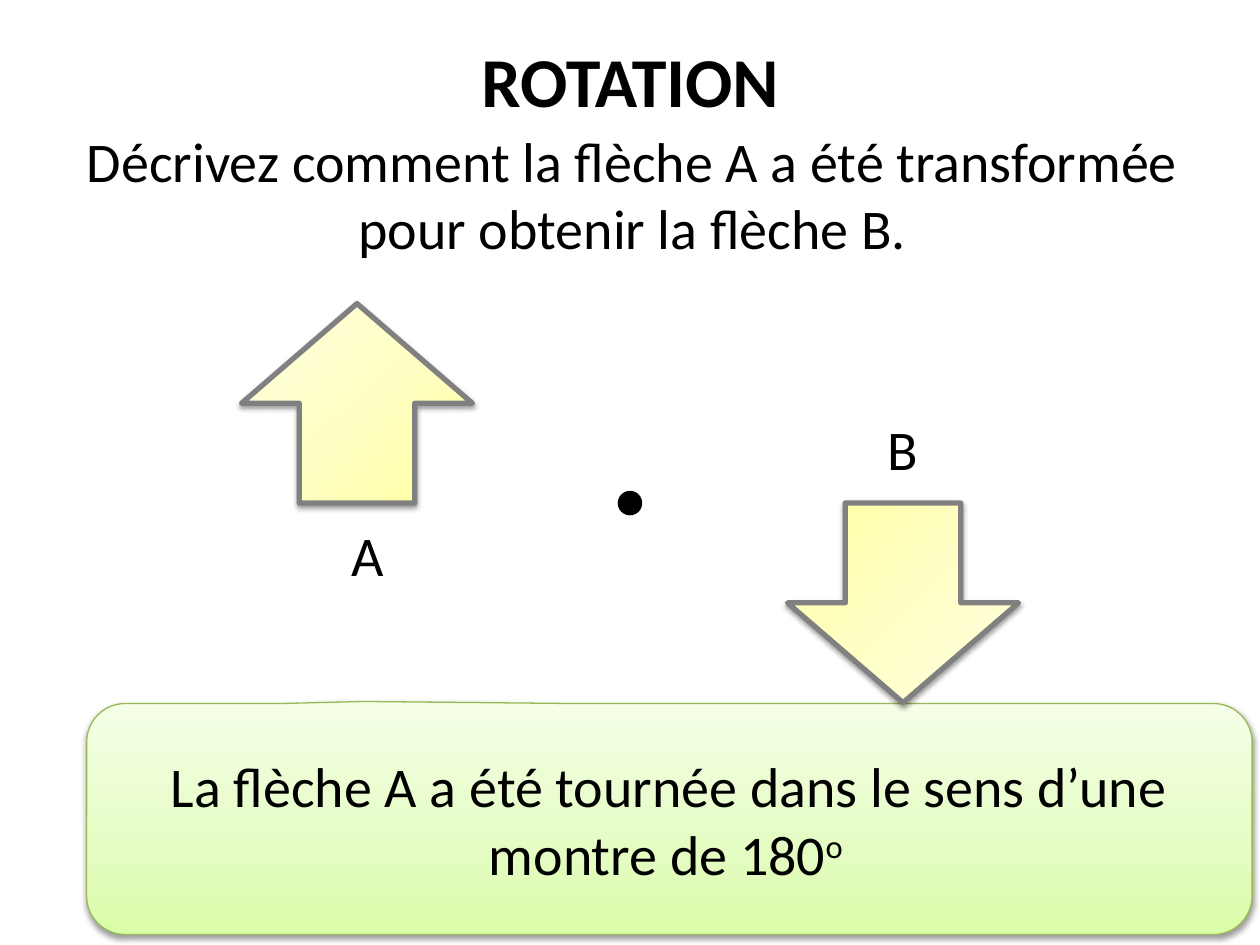
from lxml.etree import SubElement
from pptx import Presentation
from pptx.dml.color import RGBColor
from pptx.enum.shapes import MSO_SHAPE
from pptx.enum.text import MSO_ANCHOR, PP_ALIGN
from pptx.oxml.ns import qn
from pptx.util import Pt

BLACK = "000000"
YELLOWS = [(0, "FFFFA0"), (50, "FFFFC5"), (100, "FFFFE3")]
GREENS = [(0, "DAFDA7"), (35, "E4FCC2"), (100, "F5FFE7")]


def color(value):
    """Turn a hex string into a colour."""
    return RGBColor.from_string(value)


def add_span(para, text, size=32, bold=False, baseline=0):
    """Add a formatted run, raised by baseline percent."""
    span = para.add_run()
    span.text = text
    span.font.name = "Calibri"
    span.font.size = Pt(size)
    span.font.bold = bold
    span.font.color.rgb = color(BLACK)
    if baseline:
        span.font._element.set("baseline", str(baseline * 1000))


def add_text(page, text, left, top, width, height, **style):
    """Add a centred text box."""
    box = page.shapes.add_textbox(Pt(left), Pt(top), Pt(width), Pt(height))
    box.text_frame.word_wrap = True
    para = box.text_frame.paragraphs[0]
    para.alignment = PP_ALIGN.CENTER
    add_span(para, text, **style)


def add_outlined(page, kind, left, top, width, height, line, weight):
    """Add a preset shape with an outline and no shadow."""
    shape = page.shapes.add_shape(kind, Pt(left), Pt(top), Pt(width), Pt(height))
    shape.shadow.inherit = False
    shape.line.color.rgb = color(line)
    shape.line.width = Pt(weight)
    return shape


def set_gradient(shape, stops, angle):
    """Fill a shape with colour stops along a clockwise angle."""
    shape.fill.gradient()
    shape.fill.gradient_angle = 360 - angle
    stop_list = shape._element.spPr.find(qn("a:gradFill")).find(qn("a:gsLst"))
    for old in list(stop_list):
        stop_list.remove(old)
    for position, value in stops:
        stop = SubElement(stop_list, qn("a:gs"), pos=str(position * 1000))
        SubElement(stop, qn("a:srgbClr"), val=value)


def set_shadow(shape):
    """Give a shape a soft shadow below it."""
    effects = shape._element.spPr.find(qn("a:effectLst"))
    shadow = SubElement(effects, qn("a:outerShdw"), blurRad=str(Pt(3.1)),
                        dist=str(Pt(1.6)), dir="5400000", rotWithShape="0")
    tint = SubElement(shadow, qn("a:srgbClr"), val=BLACK)
    SubElement(tint, qn("a:alpha"), val="38000")


def add_arrow(page, left, top, rotation=0):
    """Add a yellow block arrow."""
    arrow = add_outlined(page, MSO_SHAPE.UP_ARROW, left, top, 132, 114, "808080", 3)
    arrow.rotation = rotation
    set_gradient(arrow, YELLOWS, 225)
    set_shadow(arrow)


def add_center(page):
    """Add the dot that marks the centre of rotation."""
    dot = add_outlined(page, MSO_SHAPE.OVAL, 354, 281.5, 12, 12, BLACK, 2)
    dot.fill.solid()
    dot.fill.fore_color.rgb = color(BLACK)


def add_answer(page):
    """Add the green callout with the answer."""
    callout = add_outlined(page, MSO_SHAPE.ROUNDED_RECTANGULAR_CALLOUT,
                           49.5, 402, 666, 132, "98B955", 0.75)
    for index, value in enumerate((-0.262, -0.509, 0.167)):
        callout.adjustments[index] = value
    set_gradient(callout, GREENS, 270)
    set_shadow(callout)
    frame = callout.text_frame
    frame.word_wrap = True
    frame.vertical_anchor = MSO_ANCHOR.MIDDLE
    para = frame.paragraphs[0]
    para.alignment = PP_ALIGN.CENTER
    add_span(para, "La flèche A a été tournée dans le sens d’une montre de 180")
    add_span(para, "o ", baseline=30)


def main():
    """Build the rotation slide."""
    deck = Presentation()
    deck.slide_width, deck.slide_height = Pt(720), Pt(540)
    page = deck.slides.add_slide(deck.slide_layouts[6])
    add_text(page, "ROTATION", 12, 18, 696, 55.5, size=40, bold=True)
    add_arrow(page, 138, 173.5)
    add_center(page)
    add_text(page, "Décrivez comment la flèche A a été transformée pour obtenir la flèche B.",
             13.5, 68.5, 696, 85)
    add_answer(page)
    add_arrow(page, 450, 287.5, rotation=180)
    add_text(page, "A", 192, 294, 36, 46)
    add_text(page, "B", 498, 233.5, 36, 46)
    deck.save("out.pptx")


if __name__ == "__main__":
    main()
